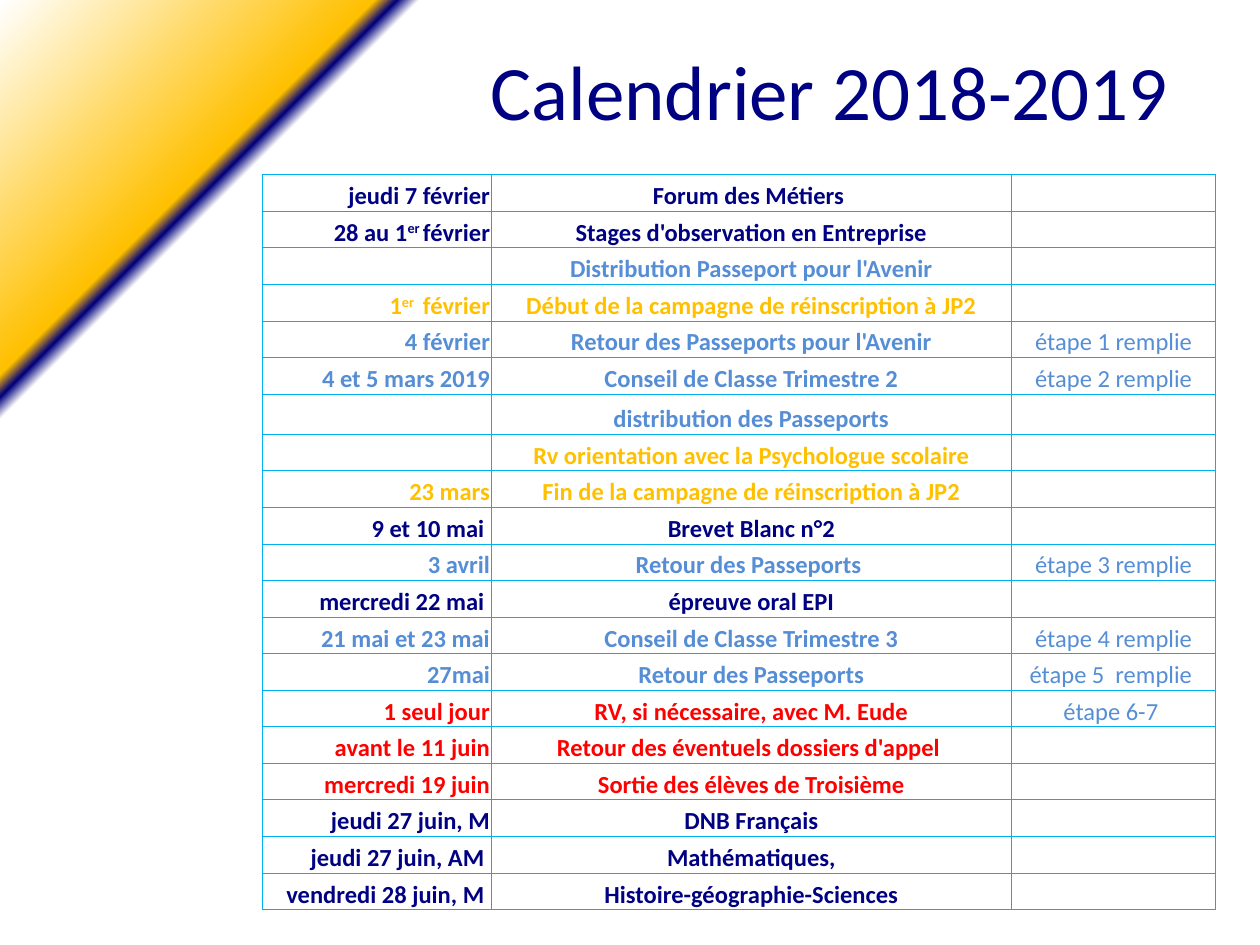
from dataclasses import dataclass

from lxml import etree
from pptx import Presentation
from pptx.dml.color import RGBColor
from pptx.enum import text as t
from pptx.oxml import ns
from pptx.util import Pt


@dataclass(frozen=True)
class Theme:
    font: str = "Calibri"
    navy: str = "000082"
    blue: str = "558ED5"
    gold: str = "FFC000"
    red: str = "FF0000"
    white: str = "FFFFFF"
    border: str = "00B0F0"
    title_size: float = 44
    cell_size: float = 14
    border_width: float = 0.5


THEME = Theme()


@dataclass(frozen=True)
class Event:
    color: str
    date: str
    label: str
    step: str = ""
    height: float = 20.9


EVENTS = [
    Event(THEME.navy, "jeudi 7 février", "Forum des Métiers "),
    Event(THEME.navy, "28 au 1^er ^février", "Stages d'observation en Entreprise"),
    Event(THEME.blue, "", "Distribution Passeport pour l'Avenir"),
    Event(THEME.gold, "1^er ^ février", "Début de la campagne de réinscription à JP2"),
    Event(THEME.blue, " 4 février", "Retour des Passeports pour l'Avenir", "étape 1 remplie"),
    Event(THEME.blue, "4 et 5 mars 2019", "Conseil de Classe Trimestre 2", "étape 2 remplie"),
    Event(THEME.blue, "", "distribution des Passeports", height=23),
    Event(THEME.gold, "", "Rv orientation avec la Psychologue scolaire"),
    Event(THEME.gold, "23 mars", "Fin de la campagne de réinscription à JP2"),
    Event(THEME.navy, "9 et 10 mai ", "Brevet Blanc n°2"),
    Event(THEME.blue, "3 avril", "Retour des Passeports ", "étape 3 remplie"),
    Event(THEME.navy, "mercredi 22 mai ", "épreuve oral EPI"),
    Event(THEME.blue, "21 mai et 23 mai", "Conseil de Classe Trimestre 3", "étape 4 remplie"),
    Event(THEME.blue, "27mai", "Retour des Passeports", "étape 5  remplie "),
    Event(THEME.red, "1 seul jour", "RV, si nécessaire, avec M. Eude", "étape 6-7 "),
    Event(THEME.red, "avant le 11 juin", "Retour des éventuels dossiers d'appel "),
    Event(THEME.red, " mercredi 19 juin", "Sortie des élèves de Troisième"),
    Event(THEME.navy, "jeudi 27 juin, M", "DNB Français"),
    Event(THEME.navy, "jeudi 27 juin, AM ", "Mathématiques,"),
    Event(THEME.navy, "vendredi 28 juin, M ", "Histoire-géographie-Sciences"),
]
COLUMN_WIDTHS = (130.5, 297.3, 116.8)


def write(frame, content: str, *, size: float, color: str, bold: bool = False,
          align=t.PP_ALIGN.CENTER, spacing: float = 1.0) -> None:
    """Write one paragraph; parts between carets are superscript."""
    paragraph = frame.paragraphs[0]
    paragraph.alignment = align
    paragraph.line_spacing = spacing
    if not content:
        end = etree.SubElement(paragraph._p, ns.qn("a:endParaRPr"))
        end.set("sz", str(int(size * 100)))
        return
    for index, part in enumerate(content.split("^")):
        run = paragraph.add_run()
        run.text = part
        font = run.font
        font.name, font.size, font.bold = THEME.font, Pt(size), bold
        font.color.rgb = RGBColor.from_string(color)
        if index % 2:
            run._r.get_or_add_rPr().set("baseline", "30000")


def add_color(parent, color: str) -> None:
    etree.SubElement(parent, ns.qn("a:srgbClr")).set("val", color)


def paint_background(slide) -> None:
    fill = slide.background.fill
    fill.gradient()
    fill.gradient_angle = 135
    stops = slide._element.find(".//" + ns.qn("a:gsLst"))
    for old in list(stops):
        stops.remove(old)
    for percent, color in ((0, THEME.white), (81, THEME.white), (82, THEME.navy),
                           (83, THEME.gold), (100, THEME.white)):
        stop = etree.SubElement(stops, ns.qn("a:gs"))
        stop.set("pos", str(percent * 1000))
        add_color(stop, color)


def format_cell(cell) -> None:
    """Set thin borders, tight margins, bottom anchor and no fill."""
    properties = cell._tc.get_or_add_tcPr()
    for side in ("lnL", "lnR", "lnT", "lnB"):
        line = etree.SubElement(properties, ns.qn(f"a:{side}"))
        line.set("w", str(Pt(THEME.border_width)))
        add_color(etree.SubElement(line, ns.qn("a:solidFill")), THEME.border)
    cell.fill.background()
    cell.margin_left = cell.margin_right = cell.margin_top = Pt(0.7)
    cell.margin_bottom = Pt(0)
    cell.vertical_anchor = t.MSO_ANCHOR.BOTTOM


def add_title(slide) -> None:
    frame = slide.shapes.add_textbox(Pt(229.7), Pt(9.4), Pt(488.9), Pt(90)).text_frame
    frame.word_wrap = True
    frame.vertical_anchor = t.MSO_ANCHOR.MIDDLE
    write(frame, "Calendrier 2018-2019", size=THEME.title_size, color=THEME.navy, spacing=0.9)


def add_calendar(slide, events: list[Event]) -> None:
    calendar = slide.shapes.add_table(
        len(events), len(COLUMN_WIDTHS), Pt(150.2), Pt(99.8),
        Pt(sum(COLUMN_WIDTHS)), Pt(sum(event.height for event in events))).table
    calendar.first_row = calendar.horz_banding = False
    for column, width in zip(calendar.columns, COLUMN_WIDTHS):
        column.width = Pt(width)
    for row, event in zip(calendar.rows, events):
        row.height = Pt(event.height)
        date, label, step = row.cells
        for cell in (date, label, step):
            format_cell(cell)
        size = THEME.cell_size
        write(date.text_frame, event.date, size=size, color=event.color, bold=True,
              align=t.PP_ALIGN.RIGHT)
        write(label.text_frame, event.label, size=size, color=event.color, bold=True)
        write(step.text_frame, event.step, size=size, color=THEME.blue)


def main() -> None:
    deck = Presentation()
    deck.slide_width, deck.slide_height = Pt(720), Pt(540)
    slide = deck.slides.add_slide(deck.slide_layouts[6])
    paint_background(slide)
    add_title(slide)
    add_calendar(slide, EVENTS)
    deck.save("out.pptx")


if __name__ == "__main__":
    main()
